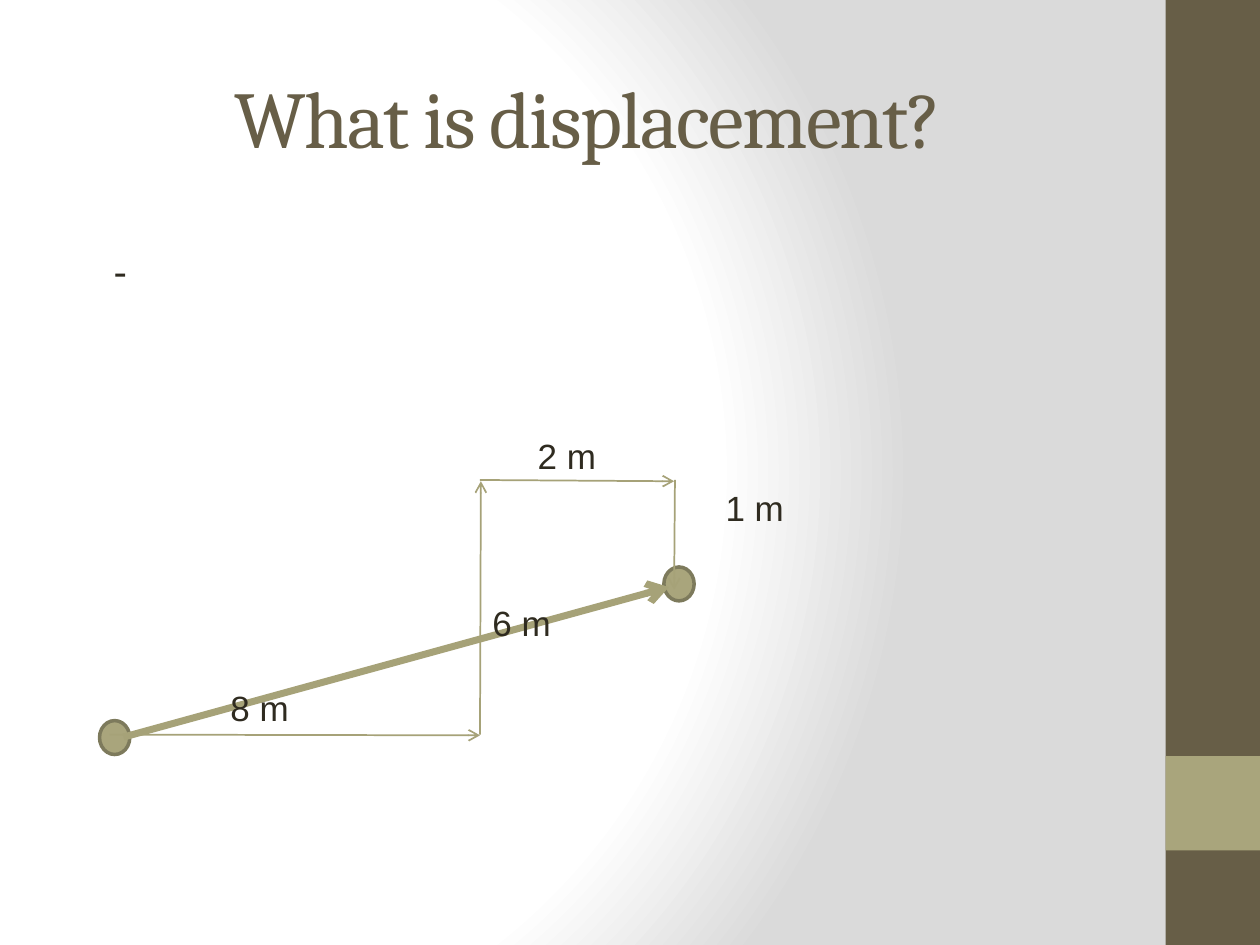
from pptx import Presentation, util as u
from pptx.dml import color
from pptx.enum import shapes, text
from pptx.oxml import parse_xml, ns
from lxml import etree

Pt = u.Pt
INK, BROWN, OLIVE = "2F2B20", "675E47", "A9A57C"


def paint(target, value):
    if hasattr(target, "solid"):
        target.solid()
        target = target.fore_color
    target.rgb = color.RGBColor.from_string(value)


def write(shape, words, font, size, value):
    shape.text_frame.text = words
    shape.text_frame.word_wrap = True
    run = shape.text_frame.paragraphs[0].runs[0]
    run.font.name = font
    run.font.size = Pt(size)
    paint(run.font.color, value)
    return run


presentation = Presentation()
presentation.slide_width = Pt(720)
presentation.slide_height = Pt(540)
slide = presentation.slides.add_slide(presentation.slide_layouts[5])

stops = "".join(
    f'<a:gs pos="{position * 1000}"><a:srgbClr val="{value}"/></a:gs>'
    for position, value in [(0, "FFFFFF"), (75, "FFFFFF"), (100, "DADADA")]
)
background = parse_xml(
    f'<p:bg {ns.nsdecls("p", "a")}><p:bgPr><a:gradFill rotWithShape="1"><a:gsLst>{stops}</a:gsLst>'
    '<a:path path="circle"><a:fillToRect l="20000" t="50000" r="100000" b="50000"/></a:path>'
    '</a:gradFill><a:effectLst/></p:bgPr></p:bg>'
)
slide.element.cSld.insert(0, background)

title = slide.shapes.title
title.left, title.top, title.width, title.height = Pt(36), Pt(21.6), Pt(600), Pt(90)
title_run = write(title, "What is displacement?", "Cambria", 46, BROWN)
title_run._r.get_or_add_rPr().set("spc", "-100")
title.text_frame.vertical_anchor = text.MSO_ANCHOR.MIDDLE
title.text_frame.paragraphs[0].alignment = text.PP_ALIGN.CENTER

for top, height, value in [(0, 540, BROWN), (432, 54, OLIVE)]:
    bar = slide.shapes.add_shape(shapes.MSO_SHAPE.RECTANGLE, Pt(666), Pt(top), Pt(54), Pt(height))
    bar.shadow.inherit = False
    paint(bar.fill, value)
    bar.line.fill.background()

body = slide.shapes.add_textbox(Pt(31), Pt(136.8), Pt(648), Pt(325.4))
write(body, "-", "Calibri", 24, INK)
body_paragraph = body.text_frame.paragraphs[0]
body_paragraph.space_before = Pt(4.8)
body_paragraph._p.get_or_add_pPr().set("marL", str(Pt(27)))

for left, top in [(56.9, 411.8), (379.4, 324)]:
    point = slide.shapes.add_shape(shapes.MSO_SHAPE.OVAL, Pt(left), Pt(top), Pt(17.3), Pt(19.4))
    point.shadow.inherit = False
    paint(point.fill, OLIVE)
    paint(point.line.fill, "7D7A5C")
    point.line.width = Pt(2)

arrows = [
    (70.6, 421.2, 382.3, 335.5, 4),
    (62.6, 419.8, 274.3, 420.2, 1),
    (274.3, 419.8, 274.8, 275, 1),
    (274.3, 274.3, 385.2, 275, 1),
    (385.7, 274.3, 385.2, 337, 1),
]
for *ends, width in arrows:
    arrow = slide.shapes.add_connector(shapes.MSO_CONNECTOR.STRAIGHT, *map(Pt, ends))
    paint(arrow.line.fill, "A6A278")
    arrow.line.width = Pt(width)
    etree.SubElement(arrow.line._get_or_add_ln(), ns.qn("a:tailEnd"), type="arrow")
    etree.SubElement(arrow._element.spPr, ns.qn("a:effectLst"))

labels = [("8 m", 124.6, 388.8), ("6 m", 274.3, 340), ("2 m", 300.2, 244.8), ("1 m", 407.5, 274.3)]
for words, left, top in labels:
    label = slide.shapes.add_textbox(Pt(left), Pt(top), Pt(74), Pt(29))
    write(label, words, "Arial", 20, INK)

presentation.save("out.pptx")
